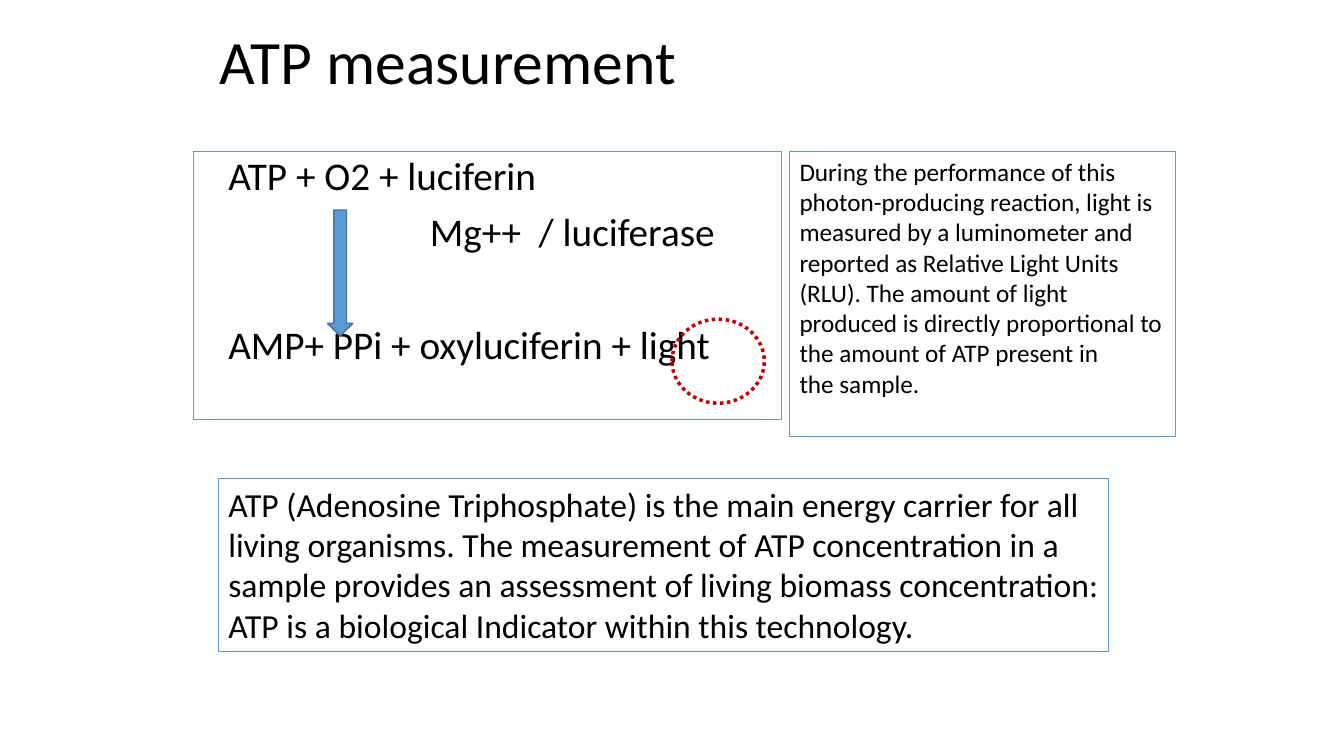
from pptx import Presentation
from pptx.dml.color import RGBColor
from pptx.enum.dml import MSO_LINE
from pptx.enum.shapes import MSO_SHAPE
from pptx.enum.text import MSO_ANCHOR, PP_ALIGN
from pptx.util import Inches, Pt

RECTANGLE = MSO_SHAPE.RECTANGLE
DOWN_ARROW = MSO_SHAPE.DOWN_ARROW
OVAL = MSO_SHAPE.OVAL
DOTTED = MSO_LINE.ROUND_DOT
TOP, MIDDLE = MSO_ANCHOR.TOP, MSO_ANCHOR.MIDDLE
LEFT = PP_ALIGN.LEFT

COLOURS = {"text": "000000", "blue": "5B9BD5", "edge": "43739E", "red": "C00000"}
COLUMNS, ROWS = 160, 90
UNIT = Inches(1 / 12)


class SlideBuilder:
    """Holds the style and the current page; places are in grid columns and rows."""

    font_name = "Calibri"

    def __init__(self, deck):
        self.page = deck.slides.add_slide(deck.slide_layouts[6])

    def colour(self, name):
        return RGBColor.from_string(COLOURS[name])

    def place(self, *cells):
        return [round(cell * UNIT) for cell in cells]

    def shape(self, kind, cells, line, weight, fill=None, dash=None):
        shape = self.page.shapes.add_shape(kind, *self.place(*cells))
        shape.shadow.inherit = False
        if fill:
            shape.fill.solid()
            shape.fill.fore_color.rgb = self.colour(fill)
        else:
            shape.fill.background()
        shape.line.color.rgb = self.colour(line)
        shape.line.width = Pt(weight)
        if dash:
            shape.line.dash_style = dash
        return shape

    def set_text(self, box, lines, size, anchor=TOP, spacing=1.0):
        frame = box.text_frame
        frame.word_wrap = True
        frame.vertical_anchor = anchor
        frame.text = "\n".join(lines)
        for para in frame.paragraphs:
            para.alignment = LEFT
            para.line_spacing = spacing
            for span in para.runs:
                span.font.name = self.font_name
                span.font.size = Pt(size)
                span.font.color.rgb = self.colour("text")
        return frame.paragraphs

    def title(self, cells, text):
        box = self.page.shapes.add_textbox(*self.place(*cells))
        self.set_text(box, [text], 44, MIDDLE, 0.9)

    def framed_text(self, cells, lines, size, spacing=1.0):
        box = self.shape(RECTANGLE, cells, "blue", 0.75)
        return self.set_text(box, lines, size, spacing=spacing)

    def reaction(self, cells, steps):
        """Each step is its text, its indent in columns and the space before it."""
        paras = self.framed_text(cells, [text for text, _, _ in steps], 28, 0.9)
        for para, (_, indent, gap) in zip(paras, steps):
            para.space_before = Pt(gap)
            para._p.get_or_add_pPr().set("marL", str(indent * UNIT))


def main():
    deck = Presentation()
    deck.slide_width, deck.slide_height = COLUMNS * UNIT, ROWS * UNIT
    builder = SlideBuilder(deck)

    builder.title((25, 3, 92, 9.4), "ATP measurement")

    # Reaction with its arrow
    builder.reaction((23, 18, 70, 32), [
        ("ATP + O2 + luciferin", 3, 0),
        ("Mg++  / luciferase", 27, 10),
        ("AMP+ PPi + oxyluciferin + light", 3, 50.5),
    ])
    builder.shape(DOWN_ARROW, (39, 25, 3, 15), "edge", 1, fill="blue")

    # Explanations
    builder.framed_text((26, 57, 106, 20.6), [
        "ATP (Adenosine Triphosphate) is the main energy carrier for all living "
        "organisms. The measurement of ATP concentration in a sample provides an "
        "assessment of living biomass concentration: ATP is a biological Indicator "
        "within this technology.",
    ], 24)
    builder.framed_text((94, 18, 46, 34), [
        "During the performance of this photon-producing reaction, light is measured "
        "by a luminometer and reported as Relative Light Units",
        "(RLU). The amount of light produced is directly proportional to the amount "
        "of ATP present in",
        "the sample.",
    ], 18)

    # Ring around the emitted light
    builder.shape(OVAL, (80, 38, 11, 10), "red", 2.5, dash=DOTTED)

    deck.save("out.pptx")


if __name__ == "__main__":
    main()
